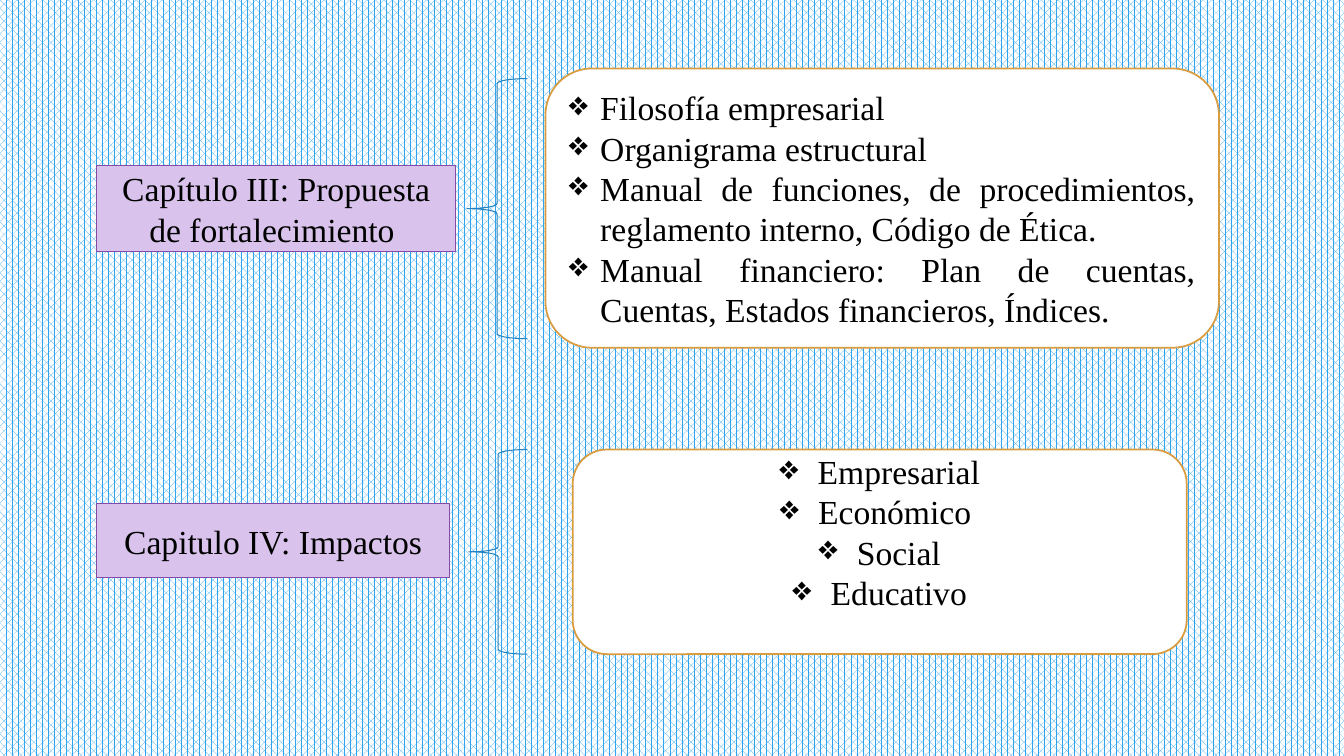
from dataclasses import dataclass

from lxml import etree
from pptx import Presentation
from pptx.dml.color import RGBColor
from pptx.enum.dml import MSO_PATTERN
from pptx.enum.shapes import MSO_SHAPE
from pptx.enum.text import MSO_ANCHOR, PP_ALIGN
from pptx.oxml.ns import qn
from pptx.shapes.autoshape import Shape
from pptx.slide import Slide
from pptx.util import Inches, Pt

RECTANGLE = MSO_SHAPE.RECTANGLE
ROUNDED = MSO_SHAPE.ROUNDED_RECTANGLE
BRACE = MSO_SHAPE.LEFT_BRACE
CENTER = PP_ALIGN.CENTER
JUSTIFY = PP_ALIGN.JUSTIFY
MIDDLE = MSO_ANCHOR.MIDDLE
DOTS = MSO_PATTERN.PERCENT_60

BLACK = RGBColor(0x00, 0x00, 0x00)
WHITE = RGBColor(0xFF, 0xFF, 0xFF)
SKY = RGBColor(0x2F, 0xA3, 0xEE)
BLUE = RGBColor(0x26, 0x83, 0xBF)
LILAC = RGBColor(0xD9, 0xC3, 0xEC)
PURPLE = RGBColor(0x83, 0x4A, 0xA7)
GOLD = RGBColor(0xD9, 0x9C, 0x3F)

FONT = "Times New Roman"
FONT_SIZE = Pt(24)


@dataclass(frozen=True)
class Box:
    left: float
    top: float
    width: float
    height: float


@dataclass(frozen=True)
class Chapter:
    title: str
    topics: tuple[str, ...]
    title_box: Box
    brace_box: Box
    topics_box: Box
    alignment: PP_ALIGN
    indent: float
    bottom_inset: float


CHAPTERS = (
    Chapter(
        "Capítulo III: Propuesta de fortalecimiento ",
        (
            "Filosofía empresarial",
            "Organigrama estructural",
            "Manual de funciones, de procedimientos, reglamento interno, Código de Ética.",
            "Manual financiero: Plan de cuentas, Cuentas, Estados financieros, Índices.",
        ),
        Box(0.96, 1.64, 3.56, 0.86),
        Box(4.63, 0.78, 0.6, 2.58),
        Box(5.41, 0.68, 6.68, 2.77),
        JUSTIFY, 0.31, 0.05,
    ),
    Chapter(
        "Capitulo IV: Impactos",
        ("Empresarial", "Económico ", "Social", "Educativo"),
        Box(0.96, 5, 3.5, 0.73),
        Box(4.65, 4.46, 0.58, 2.03),
        Box(5.68, 4.46, 6.09, 2.03),
        CENTER, 0.38, 0.45,
    ),
)


def add_outlined_shape(slide: Slide, kind: MSO_SHAPE, box: Box, line: RGBColor,
                       line_width: float, fill: RGBColor | None = None) -> Shape:
    shape = slide.shapes.add_shape(kind, Inches(box.left), Inches(box.top),
                                   Inches(box.width), Inches(box.height))
    shape.shadow.inherit = False
    if fill is None:
        shape.fill.background()
    else:
        shape.fill.solid()
        shape.fill.fore_color.rgb = fill
    shape.line.color.rgb = line
    shape.line.width = Pt(line_width)
    return shape


def write_paragraphs(shape: Shape, texts: tuple[str, ...], alignment: PP_ALIGN,
                     indent: float = 0) -> None:
    """Fill the shape with text, bulleted when an indent is given."""
    frame = shape.text_frame
    frame.word_wrap = True
    frame.vertical_anchor = MIDDLE
    for index, text in enumerate(texts):
        paragraph = frame.add_paragraph() if index else frame.paragraphs[0]
        paragraph.alignment = alignment
        if indent:
            properties = paragraph._p.get_or_add_pPr()
            properties.set("marL", str(Inches(indent)))
            properties.set("indent", str(-Inches(indent)))
            etree.SubElement(properties, qn("a:buChar")).set("char", "❖")
        run = paragraph.add_run()
        run.text = text
        run.font.name = FONT
        run.font.size = FONT_SIZE
        run.font.color.rgb = BLACK


def add_chapter(slide: Slide, chapter: Chapter) -> None:
    title = add_outlined_shape(slide, RECTANGLE, chapter.title_box, PURPLE, 0.75, LILAC)
    write_paragraphs(title, (chapter.title,), CENTER)
    add_outlined_shape(slide, BRACE, chapter.brace_box, BLUE, 0.75)
    topics = add_outlined_shape(slide, ROUNDED, chapter.topics_box, GOLD, 1.25, WHITE)
    topics.text_frame.margin_bottom = Inches(chapter.bottom_inset)
    write_paragraphs(topics, chapter.topics, chapter.alignment, chapter.indent)


def main() -> None:
    presentation = Presentation()
    presentation.slide_width = Inches(13.33)
    presentation.slide_height = Inches(7.5)
    slide = presentation.slides.add_slide(presentation.slide_layouts[6])
    background = slide.background.fill
    background.patterned()
    background.pattern = DOTS
    background.fore_color.rgb = SKY
    background.back_color.rgb = WHITE
    for chapter in CHAPTERS:
        add_chapter(slide, chapter)
    presentation.save("out.pptx")


if __name__ == "__main__":
    main()
